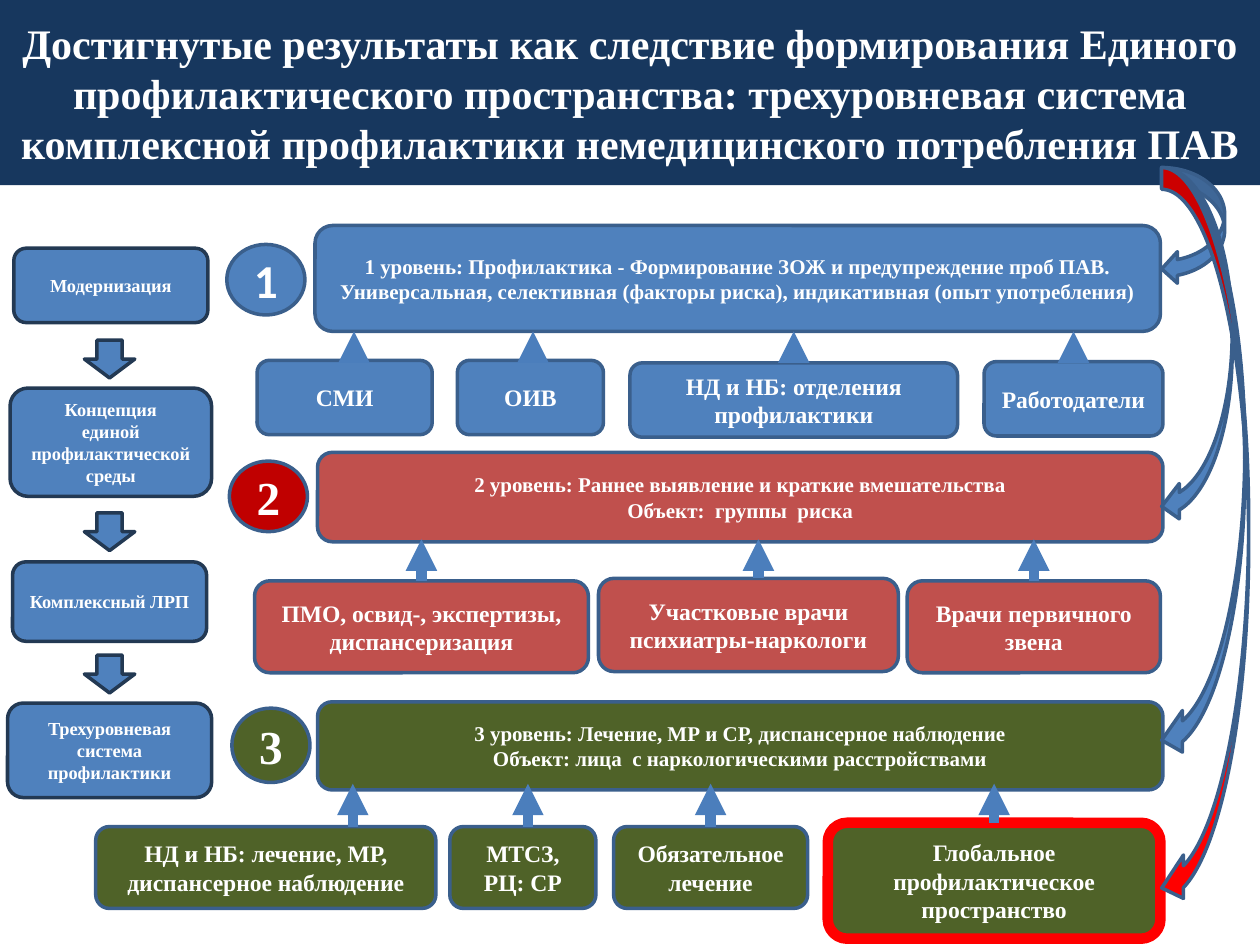
from dataclasses import dataclass
from typing import Optional

import pptx
import pptx.dml.color
import pptx.enum.shapes
import pptx.enum.text
import pptx.oxml
import pptx.oxml.ns
import pptx.util

Inches = pptx.util.Inches
Pt = pptx.util.Pt
SHAPES = pptx.enum.shapes.MSO_SHAPE

SERIF = "Times New Roman"
WHITE, NAVY, BLUE, RED, GREEN = "FFFFFF", "17375E", "4F81BD", "C0504D", "4F6228"
BRIGHT_RED, DARK_RED = "FF0000", "C00000"
OUTLINE, STEP_OUTLINE, ARROW = "3A5F8C", "233953", "4B7EBC"


@dataclass
class Box:
    text: str
    left: float
    top: float
    width: float
    height: float
    arrow_x: Optional[float] = None  # None: the arrow leaves from the middle of the top
    line: str = OUTLINE
    line_width: float = 2


@dataclass
class Level:
    color: str
    badge_color: str
    badge_font: str
    badge: Box
    bar: Box
    arrow_end: float
    children: list[Box]


LEVELS = [
    Level(BLUE, BLUE, "Calibri", Box("1", 1.8, 1.94, 0.62, 0.56),
          Box("1 уровень: Профилактика - Формирование ЗОЖ и предупреждение проб ПАВ. "
              "Универсальная, селективная (факторы риска), индикативная (опыт употребления)",
              2.5, 1.79, 6.71, 0.84),
          2.63, [
              Box("СМИ", 2.04, 2.86, 1.39, 0.59, 2.81),
              Box("ОИВ", 3.63, 2.86, 1.16, 0.59, 4.23),
              Box("НД и НБ: отделения профилактики", 5, 2.88, 2.6, 0.59),
              Box("Работодатели", 7.81, 2.87, 1.42, 0.59)]),
    Level(RED, DARK_RED, SERIF, Box("2", 1.82, 3.66, 0.62, 0.56),
          Box("2 уровень: Раннее выявление и краткие вмешательства\n"
              "Объект:  группы  риска", 2.52, 3.59, 6.71, 0.71),
          4.28, [
              Box("ПМО, освид-, экспертизы, диспансеризация", 2.02, 4.61, 2.65, 0.73),
              Box("Участковые врачи психиатры-наркологи", 4.75, 4.59, 2.38, 0.74, 6.02),
              Box("Врачи первичного звена", 7.2, 4.61, 2.01, 0.73)]),
    Level(GREEN, GREEN, SERIF, Box("3", 1.84, 5.62, 0.62, 0.59),
          Box("3 уровень: Лечение, МР и СР, диспансерное наблюдение\n"
              "Объект: лица  с наркологическими расстройствами", 2.52, 5.57, 6.71, 0.7),
          6.22, [
              Box("НД и НБ: лечение, МР, диспансерное наблюдение", 0.76, 6.56, 2.7, 0.65, 2.8),
              Box("МТСЗ, РЦ: СР", 3.57, 6.56, 1.16, 0.65, 4.19),
              Box("Обязательное лечение", 4.87, 6.56, 1.54, 0.65),
              Box("Глобальное профилактическое пространство", 6.57, 6.53, 2.64, 0.92,
                  line=BRIGHT_RED, line_width=6)]),
]

STEPS = [
    Box("Модернизация", 0.11, 1.97, 1.54, 0.59, line=STEP_OUTLINE),
    Box("Концепция\nединой профилактической среды", 0.08, 3.08, 1.6, 0.86, line=STEP_OUTLINE),
    Box("Комплексный ЛРП", 0.1, 4.46, 1.54, 0.63, line=STEP_OUTLINE),
    Box("Трехуровневая система профилактики", 0.06, 5.58, 1.62, 0.75, line=STEP_OUTLINE),
]
STEP_ARROW_TOPS = [2.7, 4.07, 5.2]

# Width, height and fill of the arrows fanning out from the title
CURVED_ARROWS = [(0.5, 0.93, BLUE), (0.56, 2.83, BLUE), (0.66, 4.71, BLUE),
                 (0.69, 5.89, BRIGHT_RED)]


def rgb(color: str) -> pptx.dml.color.RGBColor:
    return pptx.dml.color.RGBColor.from_string(color)


def write_text(shape, text: str, size: float, font_name: str = SERIF) -> None:
    frame = shape.text_frame
    frame.text = text
    frame.word_wrap = True
    frame.vertical_anchor = pptx.enum.text.MSO_ANCHOR.MIDDLE
    frame.margin_left = frame.margin_right = Inches(0.08)
    frame.margin_top = frame.margin_bottom = Inches(0.04)
    for paragraph in frame.paragraphs:
        paragraph.alignment = pptx.enum.text.PP_ALIGN.CENTER
        paragraph.font.name = font_name
        paragraph.font.size = Pt(size)
        paragraph.font.bold = True
        paragraph.font.color.rgb = rgb(WHITE)


def draw_shape(slide, kind, box: Box, fill: str):
    shape = slide.shapes.add_shape(kind, Inches(box.left), Inches(box.top),
                                   Inches(box.width), Inches(box.height))
    shape.shadow.inherit = False
    shape.fill.solid()
    shape.fill.fore_color.rgb = rgb(fill)
    shape.line.color.rgb = rgb(box.line)
    shape.line.width = Pt(box.line_width)
    return shape


def draw_box(slide, box: Box, fill: str, size: float):
    shape = draw_shape(slide, SHAPES.ROUNDED_RECTANGLE, box, fill)
    write_text(shape, box.text, size)
    return shape


def draw_up_arrow(slide, shape, box: Box, end_y: float) -> None:
    joined = box.arrow_x is None
    x = shape.left + shape.width // 2 if joined else Inches(box.arrow_x)
    connector = slide.shapes.add_connector(pptx.enum.shapes.MSO_CONNECTOR.STRAIGHT,
                                           x, shape.top, x, Inches(end_y))
    if joined:
        connector.begin_connect(shape, 0)
    connector.line.color.rgb = rgb(ARROW)
    connector.line.width = Pt(6)
    line = connector.line._get_or_add_ln()
    line.append(pptx.oxml.parse_xml(
        f'<a:tailEnd {pptx.oxml.ns.nsdecls("a")} type="triangle"/>'))
    connector._element.spPr.append(pptx.oxml.parse_xml(
        f'<a:effectLst {pptx.oxml.ns.nsdecls("a")}/>'))


def draw_level(slide, level: Level) -> None:
    draw_box(slide, level.bar, level.color, 12)
    badge = draw_shape(slide, SHAPES.OVAL, level.badge, level.badge_color)
    write_text(badge, level.badge.text, 27, level.badge_font)
    for child in level.children:
        shape = draw_box(slide, child, level.color, 13.5)
        draw_up_arrow(slide, shape, child, level.arrow_end)


def main() -> None:
    presentation = pptx.Presentation()
    presentation.slide_width, presentation.slide_height = Inches(10), Inches(7.5)
    slide = presentation.slides.add_slide(presentation.slide_layouts[5])

    # Title band
    title = slide.shapes.title
    title.left, title.top, title.width, title.height = 0, 0, Inches(10), Inches(1.47)
    title.fill.solid()
    title.fill.fore_color.rgb = rgb(NAVY)
    write_text(title, "Достигнутые результаты как следствие формирования Единого "
               "профилактического пространства: трехуровневая система комплексной "
               "профилактики немедицинского потребления ПАВ", 24)

    # Three levels with their participants
    for level in LEVELS:
        draw_level(slide, level)

    # Curved arrows from the title to the levels
    for width, height, fill in CURVED_ARROWS:
        draw_shape(slide, SHAPES.CURVED_LEFT_ARROW, Box("", 9.22, 1.33, width, height), fill)

    # Steps on the left
    for step in STEPS:
        draw_box(slide, step, BLUE, 10.5)
    for top in STEP_ARROW_TOPS:
        draw_shape(slide, SHAPES.DOWN_ARROW,
                   Box("", 0.67, top, 0.4, 0.3, line=STEP_OUTLINE), BLUE)

    presentation.save("out.pptx")


if __name__ == "__main__":
    main()
